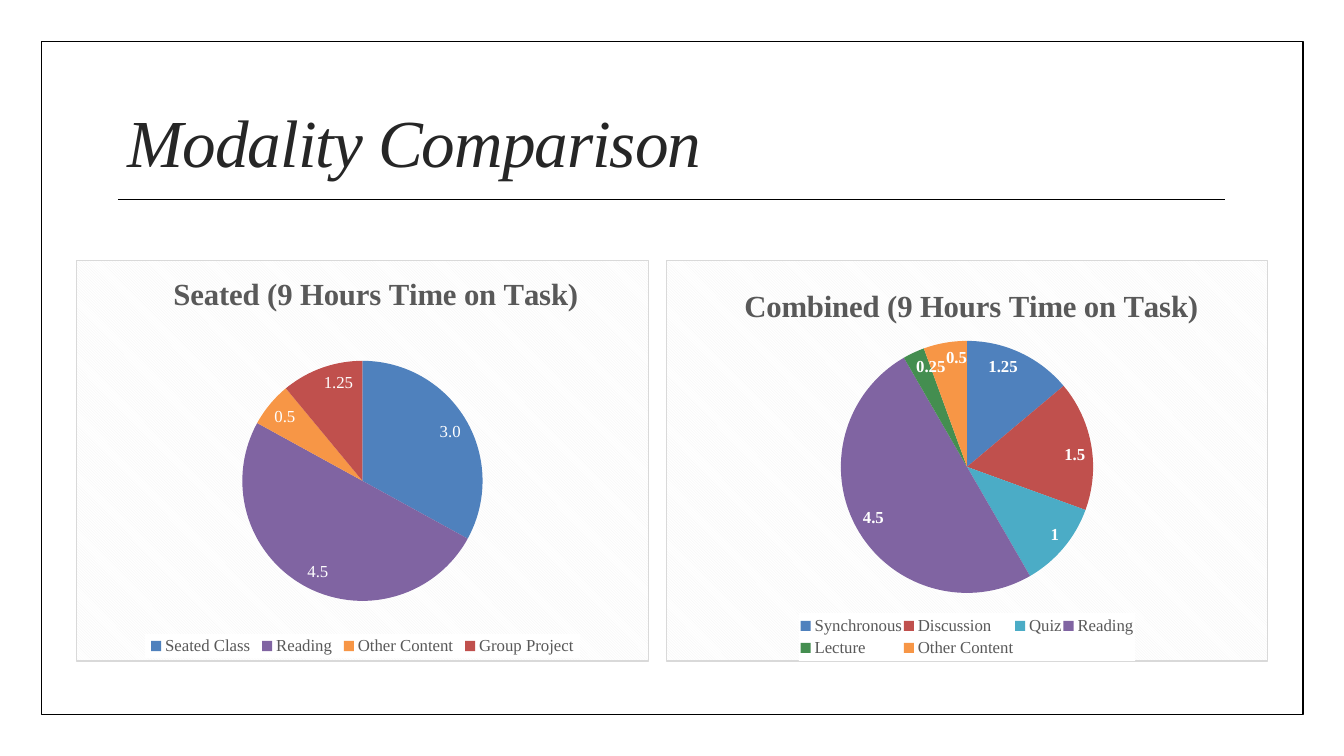
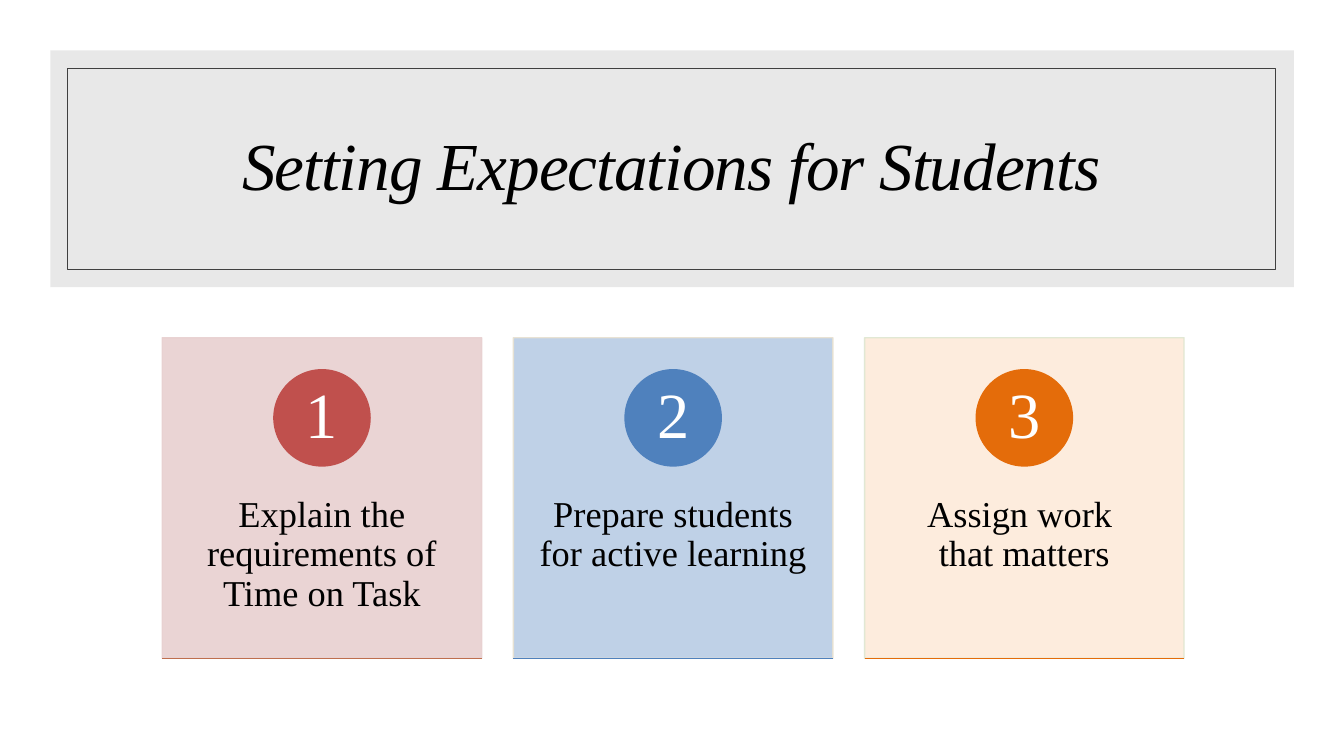
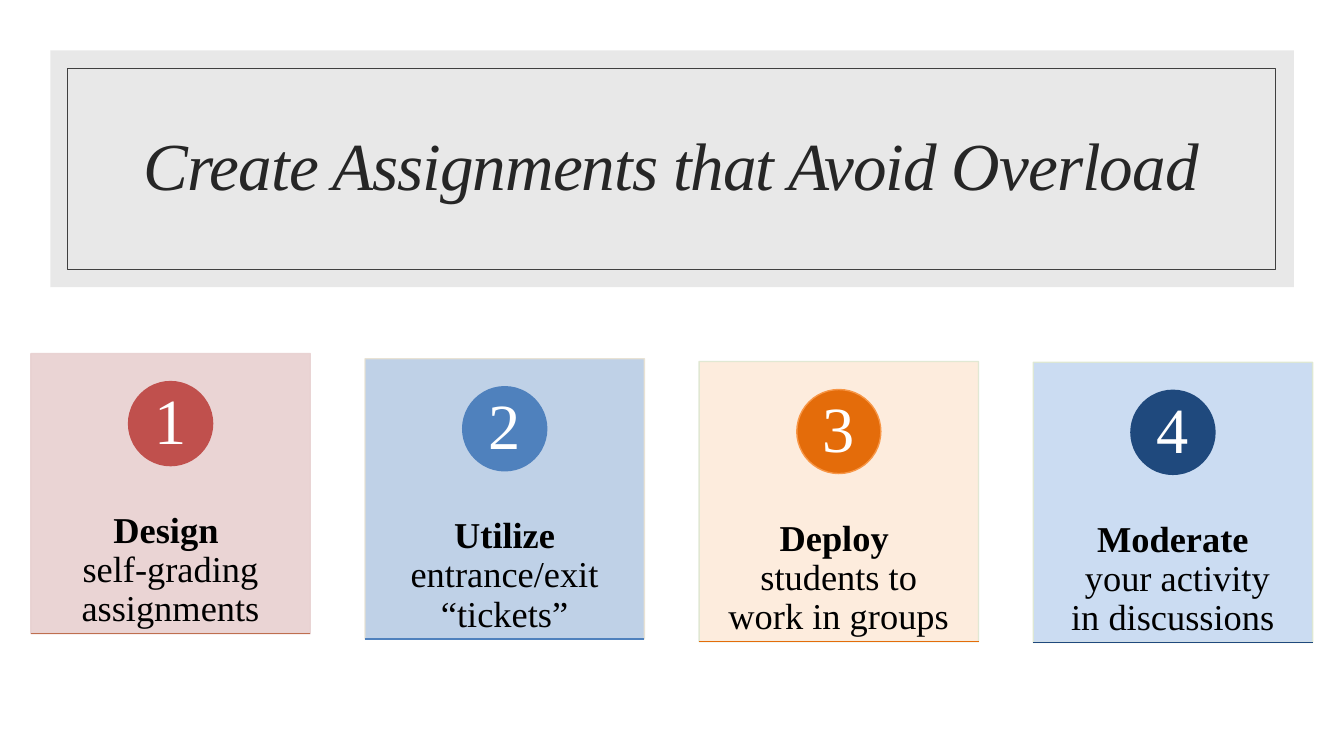
from dataclasses import dataclass

from lxml.etree import SubElement
from pptx import Presentation
from pptx.chart.data import CategoryChartData
from pptx.dml.color import RGBColor
from pptx.enum.chart import XL_CHART_TYPE, XL_LABEL_POSITION, XL_LEGEND_POSITION
from pptx.enum.shapes import MSO_CONNECTOR, MSO_SHAPE
from pptx.enum.text import MSO_ANCHOR, MSO_AUTO_SIZE, PP_ALIGN
from pptx.oxml import parse_xml
from pptx.oxml.ns import nsdecls, qn
from pptx.util import Cm, Pt

FONT = "Times New Roman"
BLACK = RGBColor(0x00, 0x00, 0x00)
WHITE = RGBColor(0xFF, 0xFF, 0xFF)
DARK = RGBColor(0x26, 0x26, 0x26)
FRAME_GRAY = RGBColor(0x40, 0x40, 0x40)
TEXT_GRAY = RGBColor(0x59, 0x59, 0x59)
BAND_GRAY = RGBColor(0xD9, 0xD9, 0xD9)
BLUE = RGBColor(0x4F, 0x81, 0xBD)
RED = RGBColor(0xC0, 0x50, 0x4D)
PURPLE = RGBColor(0x80, 0x64, 0xA2)
TEAL = RGBColor(0x4B, 0xAC, 0xC6)
GREEN = RGBColor(0x44, 0x8E, 0x50)
ORANGE = RGBColor(0xF7, 0x96, 0x46)
DEEP_ORANGE = RGBColor(0xE4, 0x6C, 0x0A)
NAVY = RGBColor(0x1F, 0x49, 0x7D)
RUST = RGBColor(0xBF, 0x6F, 0x4F)
PALE_RED = RGBColor(0xE8, 0xD0, 0xD0)
PALE_BLUE = RGBColor(0xB9, 0xCD, 0xE5)
PALE_ORANGE = RGBColor(0xFD, 0xEA, 0xDA)
PALE_NAVY = RGBColor(0xC6, 0xD9, 0xF1)
SAND = RGBColor(0xE8, 0xE1, 0xD1)
PALE_GREEN = RGBColor(0xDE, 0xE7, 0xD1)


@dataclass
class CardStyle:
    fill: RGBColor
    edge: RGBColor
    circle: RGBColor
    circle_edge: RGBColor
    base: RGBColor


RED_CARD = CardStyle(PALE_RED, PALE_RED, RED, RED, RUST)
BLUE_CARD = CardStyle(PALE_BLUE, SAND, BLUE, BLUE, BLUE)
ORANGE_CARD = CardStyle(PALE_ORANGE, PALE_GREEN, DEEP_ORANGE, DEEP_ORANGE, DEEP_ORANGE)
EDGED_ORANGE_CARD = CardStyle(PALE_ORANGE, PALE_GREEN, DEEP_ORANGE, ORANGE, DEEP_ORANGE)
NAVY_CARD = CardStyle(PALE_NAVY, PALE_GREEN, NAVY, NAVY, NAVY)


# Text and shape helpers
def add_text(paragraph, text, size, color, bold=False, italic=False,
             align=None, line_spacing=None, tracking=None):
    """Append text to a paragraph; a newline becomes a line break."""
    if align is not None:
        paragraph.alignment = align
    if line_spacing is not None:
        paragraph.line_spacing = line_spacing
    for index, line in enumerate(text.split("\n")):
        if index:
            paragraph.add_line_break()
        if not line:
            continue
        run = paragraph.add_run()
        run.text = line
        run.font.name = FONT
        run.font.size = Pt(size)
        run.font.color.rgb = color
        run.font.bold = bold
        run.font.italic = italic
        if tracking is not None:
            run.font._element.set("spc", str(tracking))


def prepare_frame(text_frame, anchor, margins=(0, 0, 0, 0)):
    text_frame.word_wrap = True
    text_frame.auto_size = MSO_AUTO_SIZE.NONE
    text_frame.vertical_anchor = anchor
    (text_frame.margin_left, text_frame.margin_top,
     text_frame.margin_right, text_frame.margin_bottom) = map(Cm, margins)


def add_box(slide, kind, left, top, width, height, fill=None, line=None,
            line_width=1, opacity=None):
    shape = slide.shapes.add_shape(kind, Cm(left), Cm(top), Cm(width), Cm(height))
    shape.shadow.inherit = False
    if fill is None:
        shape.fill.background()
    else:
        shape.fill.solid()
        shape.fill.fore_color.rgb = fill
    if line is None:
        shape.line.fill.background()
    else:
        shape.line.color.rgb = line
        shape.line.width = Pt(line_width)
    if opacity is not None:
        for color in list(shape.element.spPr.iter(qn("a:srgbClr"))):
            SubElement(color, qn("a:alpha")).set("val", str(opacity * 1000))
    return shape


def add_rule(slide, left, top, width, color, line_width):
    rule = slide.shapes.add_connector(
        MSO_CONNECTOR.STRAIGHT, Cm(left), Cm(top), Cm(left + width), Cm(top))
    rule.line.color.rgb = color
    rule.line.width = Pt(line_width)
    SubElement(rule.element.spPr, qn("a:effectLst"))


def set_title(slide, text, left, top, color, align):
    title = slide.shapes.title
    title.left, title.top, title.width, title.height = map(Cm, (left, top, 27.94, 3.81))
    prepare_frame(title.text_frame, MSO_ANCHOR.MIDDLE, (0.25, 0.13, 0.25, 0.13))
    add_text(title.text_frame.paragraphs[0], text, 48, color, italic=True,
             align=align, line_spacing=0.9, tracking=-70)
    # Bring the title in front of the band
    slide.shapes.element.append(title.element)


# Charts
def set_layout(element, position, x, y, width=None, height=None, inner=False):
    """Place a chart part by fractions of the chart area."""
    for old_layout in element.findall(qn("c:layout")):
        element.remove(old_layout)
    settings = [("layoutTarget", "inner")] if inner else []
    settings += [("xMode", "edge"), ("yMode", "edge"), ("x", x), ("y", y)]
    if width is not None:
        settings += [("w", width), ("h", height)]
    tags = "".join(f'<c:{name} val="{value}"/>' for name, value in settings)
    element.insert(position, parse_xml(
        f'<c:layout {nsdecls("c")}><c:manualLayout>{tags}</c:manualLayout></c:layout>'))


def add_pie(slide, box, title, slices, title_at, plot_at, legend_at, bold_labels):
    """Add a pie; slices hold (category, value, colour, label or None)."""
    data = CategoryChartData(number_format="General")
    data.categories = [category for category, _, _, _ in slices]
    data.add_series("Series 1", [value for _, value, _, _ in slices])
    chart = slide.shapes.add_chart(XL_CHART_TYPE.PIE, *map(Cm, box), data).chart
    chart.font.name = FONT
    chart.font.size = Pt(10)
    chart.font.color.rgb = BLACK

    chart.has_title = True
    add_text(chart.chart_title.text_frame.paragraphs[0], title, 22, TEXT_GRAY, bold=True)
    chart.has_legend = True
    legend = chart.legend
    legend.position = XL_LEGEND_POSITION.BOTTOM
    legend.include_in_layout = False
    legend.font.name = FONT
    legend.font.size = Pt(12)
    legend.font.color.rgb = TEXT_GRAY

    # Slices and their labels
    plot = chart.plots[0]
    plot.vary_by_categories = True
    plot.has_data_labels = True
    labels = plot.data_labels
    labels.show_value = True
    labels.show_percentage = False
    labels.position = XL_LABEL_POSITION.INSIDE_END
    labels.font.name = FONT
    labels.font.size = Pt(12)
    labels.font.bold = bold_labels
    labels.font.color.rgb = WHITE
    for index, (_, _, color, label) in enumerate(slices):
        point = plot.series[0].points[index]
        point.format.fill.solid()
        point.format.fill.fore_color.rgb = color
        if label:
            add_text(point.data_label.text_frame.paragraphs[0], label, 12, WHITE,
                     bold=bold_labels)
            point.data_label.position = XL_LABEL_POSITION.INSIDE_END

    # Placement, patterned area and legend background
    chart_space = chart._chartSpace
    chart_element = chart_space.find(qn("c:chart"))
    set_layout(chart_element.find(qn("c:title")), 1, *title_at)
    set_layout(chart_element.find(qn("c:plotArea")), 0, *plot_at, inner=True)
    legend_element = chart_element.find(qn("c:legend"))
    set_layout(legend_element, 1, *legend_at)
    legend_element.find(qn("c:txPr")).addprevious(parse_xml(
        f'<c:spPr {nsdecls("c", "a")}><a:solidFill><a:srgbClr val="{WHITE}"/>'
        '</a:solidFill></c:spPr>'))
    chart_element.addnext(parse_xml(
        f'<c:spPr {nsdecls("c", "a")}><a:pattFill prst="dkDnDiag">'
        '<a:fgClr><a:srgbClr val="F2F2F2"/></a:fgClr>'
        f'<a:bgClr><a:srgbClr val="{WHITE}"/></a:bgClr></a:pattFill>'
        f'<a:ln w="9525"><a:solidFill><a:srgbClr val="{BAND_GRAY}"/></a:solidFill></a:ln>'
        '</c:spPr>'))


# Numbered cards
def add_card(slide, left, top, width, height, number, style, lead, text):
    card = add_box(slide, MSO_SHAPE.RECTANGLE, left, top, width, height,
                   fill=style.fill, line=style.edge, opacity=90)
    prepare_frame(card.text_frame, MSO_ANCHOR.TOP, (0.64, 3.99, 0.64, 0))
    paragraph = card.text_frame.paragraphs[0]
    add_text(paragraph, lead, 26, BLACK, bold=True)
    add_text(paragraph, text, 26, BLACK, align=PP_ALIGN.CENTER, line_spacing=0.9)

    diameter = 0.3 * height
    circle = add_box(slide, MSO_SHAPE.OVAL, left + (width - diameter) / 2,
                     top + 0.1 * height, diameter, diameter,
                     fill=style.circle, line=style.circle_edge)
    prepare_frame(circle.text_frame, MSO_ANCHOR.MIDDLE)
    add_text(circle.text_frame.paragraphs[0], str(number), 46, WHITE,
             align=PP_ALIGN.CENTER, line_spacing=0.9)
    add_rule(slide, left, top + height, width, style.base, 1)


def add_card_slide(presentation, title, title_color, cards, left, pitch, width, height):
    """Add a banded title over a row of cards (top, style, lead, text)."""
    slide = presentation.slides.add_slide(presentation.slide_layouts[5])
    add_box(slide, MSO_SHAPE.RECTANGLE, 1.27, 1.27, 31.34, 5.97,
            fill=BAND_GRAY, opacity=60)
    add_box(slide, MSO_SHAPE.RECTANGLE, 1.71, 1.73, 30.43, 5.05,
            line=FRAME_GRAY, line_width=0.5)
    set_title(slide, title, 2.95, 2.34, title_color, PP_ALIGN.CENTER)
    for index, (top, style, lead, text) in enumerate(cards):
        add_card(slide, left + index * pitch, top, width, height,
                 index + 1, style, lead, text)


def add_chart_slide(presentation):
    slide = presentation.slides.add_slide(presentation.slide_layouts[5])
    set_title(slide, "Modality Comparison", 2.97, 1.78, DARK, PP_ALIGN.LEFT)
    add_pie(slide, (1.91, 6.56, 14.45, 10.11), "Seated (9 Hours Time on Task)",
            [("Seated Class", 33, BLUE, "3.0"), ("Reading", 50, PURPLE, "4.5"),
             ("Other Content", 6, ORANGE, "0.5"), ("Group Project", 11, RED, "1.25")],
            title_at=(0.16, 0.02), plot_at=(0.29, 0.25, 0.42, 0.6),
            legend_at=(0.12, 0.94, 0.76, 0.06), bold_labels=False)
    add_pie(slide, (16.79, 6.56, 15.16, 10.11), "Combined (9 Hours Time on Task)",
            [("Synchronous", 1.25, BLUE, None), ("Discussion", 1.5, RED, None),
             ("Quiz", 1, TEAL, None), ("Reading", 4.5, PURPLE, None),
             ("Lecture", 0.25, GREEN, None), ("Other Content", 0.5, ORANGE, None)],
            title_at=(0.12, 0.05), plot_at=(0.29, 0.2, 0.42, 0.63),
            legend_at=(0.22, 0.88, 0.56, 0.12), bold_labels=True)
    # Slide frame and title rule
    add_box(slide, MSO_SHAPE.RECTANGLE, 1.04, 1.04, 31.8, 16.97, line=BLACK)
    add_rule(slide, 2.97, 5.03, 27.91, BLACK, 0.5)


def main():
    presentation = Presentation()
    presentation.slide_width = Cm(33.87)
    presentation.slide_height = Cm(19.05)
    add_chart_slide(presentation)
    add_card_slide(
        presentation, "Setting Expectations for Students", BLACK,
        [(8.51, RED_CARD, "", "Explain the requirements of Time on Task"),
         (8.51, BLUE_CARD, "", "Prepare students for active learning"),
         (8.51, ORANGE_CARD, "", "Assign work \nthat matters")],
        left=4.09, pitch=8.85, width=8.05, height=8.08)
    add_card_slide(
        presentation, "Create Assignments that Avoid Overload", DARK,
        [(8.91, RED_CARD, "Design \n", "self-grading assignments"),
         (9.04, BLUE_CARD, "Utilize", " entrance/exit “tickets”"),
         (9.11, EDGED_ORANGE_CARD, "Deploy \n", "students to work in groups"),
         (9.13, NAVY_CARD, "Moderate\n", " your activity in discussions")],
        left=0.78, pitch=8.42, width=7.04, height=7.06)
    presentation.save("out.pptx")


if __name__ == "__main__":
    main()
